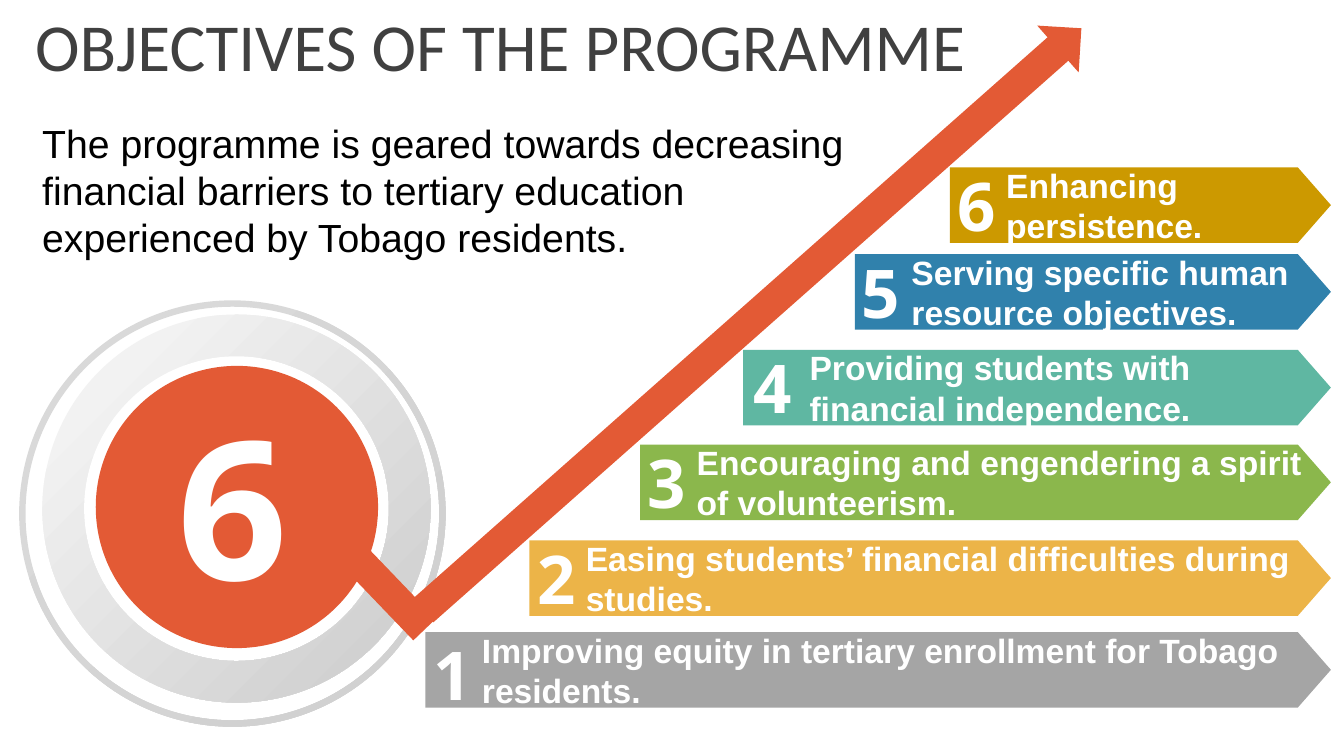
from dataclasses import dataclass

from pptx import Presentation
from pptx import util as u
from pptx.dml.color import RGBColor
from pptx.enum import shapes, text

PX = 9144  # EMU per px, 100 px to the inch

WHITE = RGBColor(0xFF, 0xFF, 0xFF)
BLACK = RGBColor(0x00, 0x00, 0x00)
CHARCOAL = RGBColor(0x40, 0x40, 0x40)
ORANGE = RGBColor(0xE3, 0x5A, 0x35)
RING_PALE = RGBColor(0xF2, 0xF2, 0xF2)
RING_LIGHT = RGBColor(0xD9, 0xD9, 0xD9)
RING_DARK = RGBColor(0xD1, 0xD1, 0xD1)
GREY = RGBColor(0xA5, 0xA5, 0xA5)
AMBER = RGBColor(0xEC, 0xB4, 0x48)
GREEN = RGBColor(0x8B, 0xB7, 0x4C)
TEAL = RGBColor(0x5F, 0xB7, 0xA2)
BLUE = RGBColor(0x30, 0x81, 0xAC)
GOLD = RGBColor(0xCC, 0x99, 0x00)

TAG_RIGHT = 1320
TAG_HEIGHT = 75


@dataclass(frozen=True)
class Objective:
    left: int
    top: int
    color: RGBColor
    lines: tuple[str, str]
    indent: int = 56
    number_dx: int = -2
    number_dy: int = -8


@dataclass(frozen=True)
class Ring:
    left: int
    top: int
    size: int
    thickness: float
    light: RGBColor


OBJECTIVES = [
    Objective(422, 627, GREY,
              ("Improving equity in tertiary enrollment for Tobago", "residents."),
              number_dy=-4),
    Objective(525, 536, AMBER,
              ("Easing students’ financial difficulties during", "studies.")),
    Objective(635, 441, GREEN,
              ("Encouraging and engendering a spirit", "of volunteerism."),
              number_dx=-3),
    Objective(737, 347, TEAL,
              ("Providing students with", "financial independence."),
              indent=66, number_dx=0),
    Objective(848, 252, BLUE,
              ("Serving specific human", "resource objectives."),
              number_dx=-3),
    Objective(942, 166, GOLD, ("Enhancing", "persistence.")),
]

RINGS = [
    Ring(19, 298, 423, 0.015, RING_LIGHT),
    Ring(42, 312, 385, 0.107, RING_PALE),
]


def add_block(slide, kind, left: int, top: int, width: int, height: int,
              color: RGBColor | None = None, rotation: float = 0):
    """Add a preset shape without outline or shadow."""
    block = slide.shapes.add_shape(kind, left * PX, top * PX, width * PX, height * PX)
    block.shadow.inherit = False
    block.line.fill.background()
    block.rotation = rotation
    if color is not None:
        block.fill.solid()
        block.fill.fore_color.rgb = color
    return block


def write(frame, *lines: str, font: str, size: int, color: RGBColor,
          bold: bool = False, wrap: bool = True, spacing: float | None = None,
          anchor=text.MSO_ANCHOR.TOP) -> None:
    """Write one paragraph per line into a text frame."""
    frame.word_wrap = wrap
    frame.vertical_anchor = anchor
    for index, line in enumerate(lines):
        paragraph = frame.add_paragraph() if index else frame.paragraphs[0]
        paragraph.alignment = text.PP_ALIGN.LEFT
        if spacing is not None:
            paragraph.line_spacing = spacing
        run = paragraph.add_run()
        run.text = line
        run.font.name = font
        run.font.size = u.Pt(size)
        run.font.bold = bold
        run.font.color.rgb = color


def add_label(slide, left: int, top: int, width: int, height: int,
              label: str, **style) -> None:
    box = slide.shapes.add_textbox(left * PX, top * PX, width * PX, height * PX)
    write(box.text_frame, label, **style)


def add_ring(slide, ring: Ring) -> None:
    donut = add_block(slide, shapes.MSO_SHAPE.DONUT,
                      ring.left, ring.top, ring.size, ring.size)
    donut.adjustments[0] = ring.thickness
    donut.fill.gradient()
    donut.fill.gradient_angle = 315
    stops = ((0.16, ring.light), (0.87, RING_DARK))
    for stop, (position, color) in zip(donut.fill.gradient_stops, stops):
        stop.position = position
        stop.color.rgb = color


def add_objective(slide, number: int, item: Objective) -> None:
    tag = add_block(slide, shapes.MSO_SHAPE.PENTAGON, item.left, item.top,
                    TAG_RIGHT - item.left, TAG_HEIGHT, item.color)
    tag.adjustments[0] = 0.438
    tag.text_frame.margin_left = item.indent * PX
    tag.text_frame.margin_right = 0
    write(tag.text_frame, *item.lines, font="Arial", size=24, color=WHITE,
          bold=True, anchor=text.MSO_ANCHOR.MIDDLE)
    add_label(slide, item.left + item.number_dx, item.top + item.number_dy, 58, 91,
              str(number), font="Open Sans", size=48, color=WHITE, bold=True,
              wrap=False)


def main() -> None:
    deck = Presentation()
    deck.slide_width = 1333 * PX
    deck.slide_height = 750 * PX
    slide = deck.slides.add_slide(deck.slide_layouts[6])

    # Dial rings
    for ring in RINGS:
        add_ring(slide, ring)

    # Staircase of objectives
    for number, item in enumerate(OBJECTIVES, start=1):
        add_objective(slide, number, item)

    # Rising arrow with its elbow, and the dial centre
    add_block(slide, shapes.MSO_SHAPE.RIGHT_ARROW, 310, 286, 872, 62, ORANGE, 318.5)
    add_block(slide, shapes.MSO_SHAPE.RECTANGLE, 334, 572, 103, 31, ORANGE, 46.2)
    add_block(slide, shapes.MSO_SHAPE.OVAL, 95, 363, 280, 280, ORANGE)
    add_label(slide, 166, 424, 238, 244, str(len(OBJECTIVES)), font="Open Sans",
              size=138, color=WHITE, bold=True, spacing=0.8)

    # Heading and introduction
    add_label(slide, 25, -1, 991, 78, "OBJECTIVES OF THE PROGRAMME",
              font="Calibri", size=48, color=CHARCOAL)
    add_label(slide, 32, 113, 841, 151,
              "The programme is geared towards decreasing financial barriers to "
              "tertiary education experienced by Tobago residents.",
              font="Arial", size=28, color=BLACK)

    deck.save("out.pptx")


if __name__ == "__main__":
    main()
